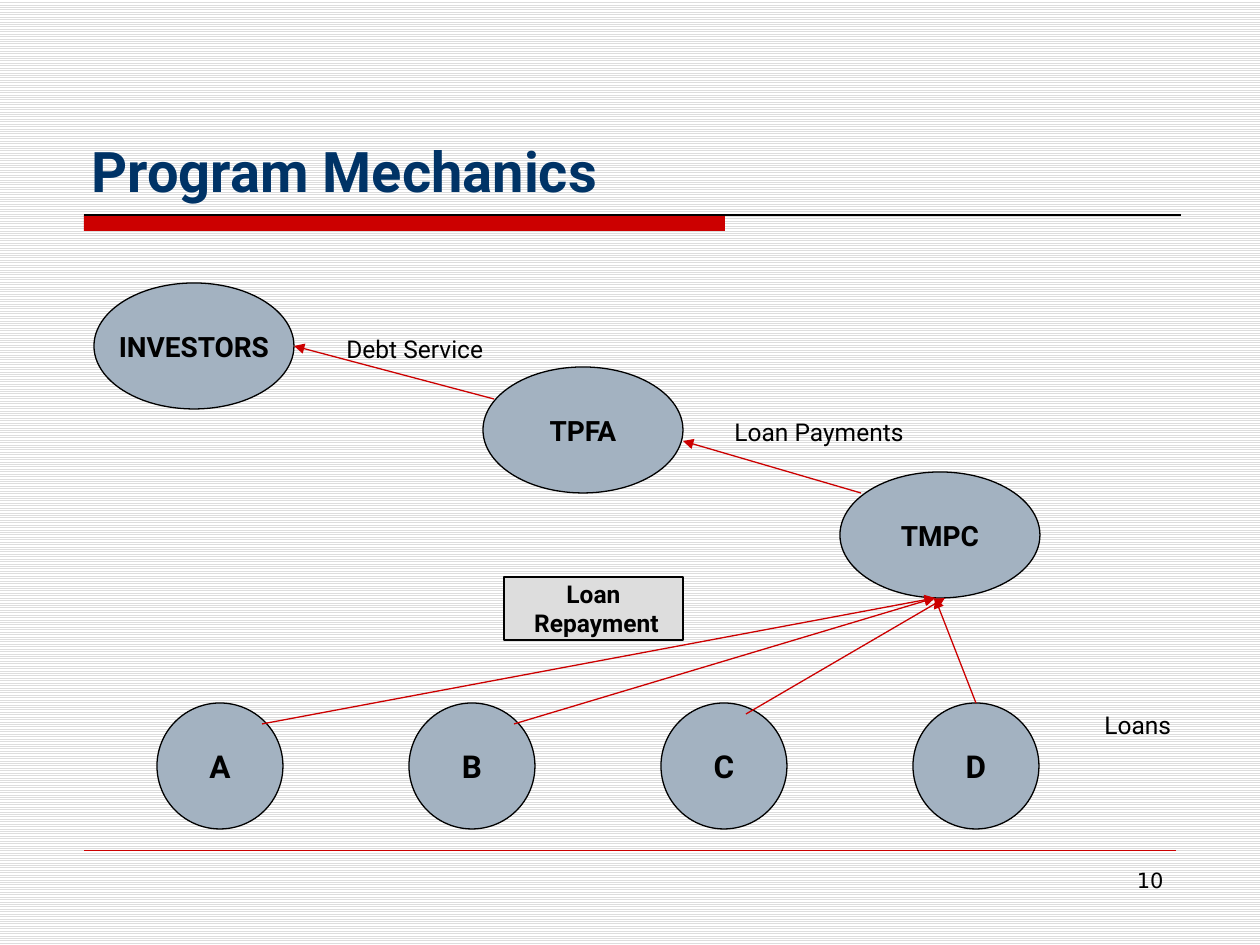
from lxml.etree import SubElement
from pptx import Presentation
from pptx.dml.color import RGBColor
from pptx.enum.dml import MSO_PATTERN
from pptx.enum.shapes import MSO_CONNECTOR, MSO_SHAPE
from pptx.enum.text import MSO_ANCHOR, PP_ALIGN
from pptx.oxml.ns import qn
from pptx.util import Pt

PX = 914400 / 126
BLACK = RGBColor(0x00, 0x00, 0x00)
WHITE = RGBColor(0xFF, 0xFF, 0xFF)
NAVY = RGBColor(0x00, 0x33, 0x66)
RED = RGBColor(0xCC, 0x00, 0x00)
SLATE = RGBColor(0xA3, 0xB2, 0xC1)
GREY = RGBColor(0xDD, 0xDD, 0xDD)

prs = Presentation()
prs.slide_width, prs.slide_height = int(1260 * PX), int(945 * PX)
s = prs.slides.add_slide(prs.slide_layouts[6])


def add_text(box, lines, size, bold=False, color=BLACK, font="Roboto",
             align=PP_ALIGN.LEFT, anchor=MSO_ANCHOR.TOP, wrap=False, kind=None):
    """Put text in a text box, or in a preset shape when kind is given."""
    box = [int(v * PX) for v in box]
    sp = s.shapes.add_shape(kind, *box) if kind else s.shapes.add_textbox(*box)
    tf = sp.text_frame
    tf.word_wrap, tf.vertical_anchor = wrap, anchor
    look = {"name": font, "size": Pt(size), "bold": bold}
    for i, line in enumerate(lines):
        p = tf.paragraphs[0] if i == 0 else tf.add_paragraph()
        p.alignment = align
        r = p.add_run()
        r.text = line
        for key, value in look.items():
            setattr(r.font, key, value)
        r.font.color.rgb = color
    return sp


def add_line(x1, y1, x2, y2, color=RED, width=0.75, arrow=False):
    """Draw a straight line, with an arrowhead at its start if wanted."""
    c = s.shapes.add_connector(MSO_CONNECTOR.STRAIGHT,
                               *[int(v * PX) for v in (x1, y1, x2, y2)])
    c.line.color.rgb = color
    c.line.width = Pt(width)
    spPr = c._element.spPr
    if arrow:
        SubElement(spPr.find(qn("a:ln")), qn("a:headEnd"), type="triangle")
    SubElement(spPr, qn("a:effectLst"))
    return c


# Background of fine horizontal lines
fill = s.background.fill
fill.patterned()
fill.pattern = MSO_PATTERN.LIGHT_HORIZONTAL
fill.fore_color.rgb, fill.back_color.rgb = GREY, WHITE

# Title rule, footer rule and page number
bar = s.shapes.add_shape(MSO_SHAPE.RECTANGLE,
                         *[int(v * PX) for v in (84, 215, 641, 16)])
bar.shadow.inherit = False
bar.fill.solid()
bar.fill.fore_color.rgb = RED
bar.line.fill.background()
add_line(84, 215, 1181, 215, color=BLACK)
add_line(84, 850, 1176, 850, width=0.25)
add_text((903, 861, 273, 66), ["10"], 12, font="DejaVu Sans",
         align=PP_ALIGN.RIGHT, wrap=True)

# Title
add_text((79, 42, 1103, 168), ["Program Mechanics"], 32, bold=True, color=NAVY,
         anchor=MSO_ANCHOR.BOTTOM, wrap=True)

# Parties, borrowers and the repayment box
OVAL, RECT = MSO_SHAPE.OVAL, MSO_SHAPE.RECTANGLE
nodes = [
    (OVAL, (94, 283, 200, 126), ["INVESTORS"], 16, SLATE),
    (OVAL, (840, 472, 200, 126), ["TMPC"], 16, SLATE),
    (OVAL, (483, 367, 200, 126), ["TPFA"], 16, SLATE),
]
nodes += [(OVAL, (157 + 252 * i, 703, 126, 126), [name], 18, SLATE)
          for i, name in enumerate("ABCD")]
nodes.append((RECT, (504, 577, 179, 63), ["Loan", " Repayment"], 14, GREY))
shapes = {}
for kind, box, lines, size, color in nodes:
    sp = add_text(box, lines, size, bold=True, align=PP_ALIGN.CENTER,
                  anchor=MSO_ANCHOR.MIDDLE, kind=kind)
    sp.shadow.inherit = False
    sp.fill.solid()
    sp.fill.fore_color.rgb = color
    sp.line.color.rgb = BLACK
    sp.line.width = Pt(0.75)
    shapes[lines[0]] = sp

# Payment arrows, each pointing at its first end
arrows = [
    (294, 346, 494, 399),  # TPFA to INVESTORS
    (683, 441, 861, 493),  # TMPC to TPFA
    (945, 598, 746, 714),  # C to TMPC
    (935, 598, 514, 724),  # B to TMPC
    (935, 598, 262, 724),  # A to TMPC
]
for ends in arrows:
    add_line(*ends, arrow=True)
add_line(935, 598, 976, 703, arrow=True).end_connect(shapes["D"], 0)

# Labels
labels = [
    ((334, 328, 165, 42), "Debt Service"),
    ((722, 411, 195, 42), "Loan Payments"),
    ((1092, 704, 92, 42), "Loans"),
]
for box, label in labels:
    add_text(box, [label], 14)

prs.save("out.pptx")
